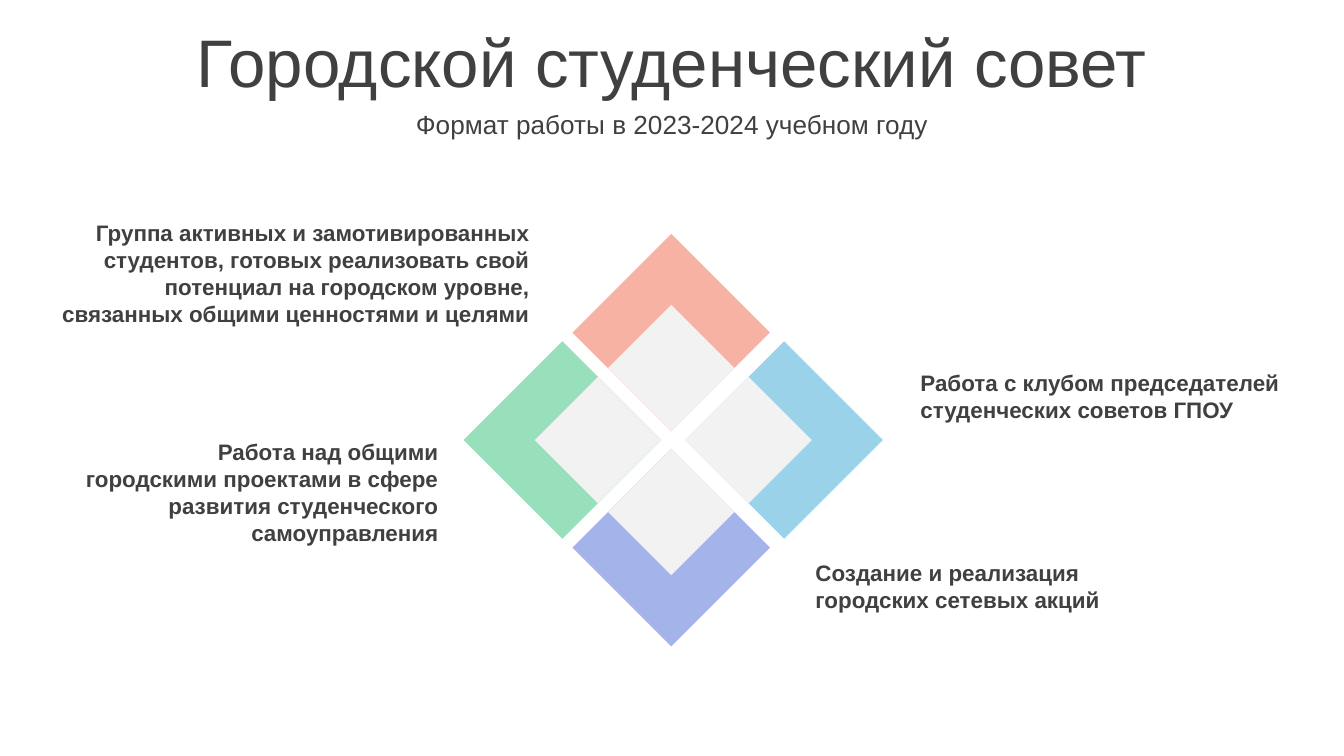
import pptx
import pptx.dml.color
import pptx.enum.shapes
import pptx.enum.text
import pptx.util

Pt = pptx.util.Pt
RGBColor = pptx.dml.color.RGBColor
PP_ALIGN = pptx.enum.text.PP_ALIGN

TEXT = RGBColor(0x40, 0x40, 0x40)
CORAL = RGBColor(0xF8, 0xB2, 0xA3)
INDIGO = RGBColor(0xA4, 0xB4, 0xEA)
GREEN = RGBColor(0x98, 0xDF, 0xBB)
SKY = RGBColor(0x9A, 0xD3, 0xE9)
GREY = RGBColor(0xF2, 0xF2, 0xF2)

OUTER = 105.8
INNER = 67.7
INSET = (OUTER - INNER) / 2

DIAMONDS = [
    (359.6, 178.2, 0, 1, CORAL),
    (359.6, 293.4, 0, -1, INDIGO),
    (301.3, 235.8, 1, 0, GREEN),
    (420.1, 235.8, -1, 0, SKY),
]

LABELS = [
    (486, 194.4, 207.4, 36, PP_ALIGN.LEFT,
     "Работа с клубом председателей студенческих советов ГПОУ"),
    (38.2, 231.1, 203.8, 65.5, PP_ALIGN.RIGHT,
     "Работа над общими городскими проектами в сфере развития "
     "студенческого самоуправления"),
    (429.8, 295.9, 203.8, 36, PP_ALIGN.LEFT,
     "Создание и реализация городских сетевых акций"),
    (24.5, 113.8, 266.4, 65.5, PP_ALIGN.RIGHT,
     "Группа активных и замотивированных студентов, готовых реализовать "
     "свой потенциал на городском уровне, связанных общими ценностями и целями"),
]


def write(tf, text, size, align, bold=False):
    tf.word_wrap = True
    tf.auto_size = pptx.enum.text.MSO_AUTO_SIZE.NONE
    p = tf.paragraphs[0]
    p.text = text
    p.alignment = align
    p.space_before = Pt(0)
    p.font.name = "Arial"
    p.font.size = Pt(size)
    p.font.bold = bold
    p.font.color.rgb = TEXT


def fill_heading(sp, top, height, text, size):
    sp.left, sp.top = Pt(0), Pt(top)
    sp.width, sp.height = Pt(720), Pt(height)
    write(sp.text_frame, text, size, PP_ALIGN.CENTER)
    sp.text_frame.vertical_anchor = pptx.enum.text.MSO_ANCHOR.MIDDLE


def add_diamond(s, x, y, size, color):
    sp = s.shapes.add_shape(
        pptx.enum.shapes.MSO_SHAPE.DIAMOND,
        Pt(x - size / 2), Pt(y - size / 2), Pt(size), Pt(size))
    sp.shadow.inherit = False
    sp.fill.solid()
    sp.fill.fore_color.rgb = color
    sp.line.fill.background()


def add_label(s, left, top, width, height, align, text):
    sp = s.shapes.add_textbox(Pt(left), Pt(top), Pt(width), Pt(height))
    write(sp.text_frame, text, 12, align, bold=True)


def main():
    prs = pptx.Presentation()
    prs.slide_width, prs.slide_height = Pt(720), Pt(405)
    s = prs.slides.add_slide(prs.slide_layouts[0])
    fill_heading(s.shapes.title, 10, 45.4, "Городской студенческий совет", 36)
    fill_heading(s.placeholders[1], 55.4, 22.3,
                 "Формат работы в 2023-2024 учебном году", 14)
    for x, y, dx, dy, color in DIAMONDS:
        add_diamond(s, x, y, OUTER, color)
        add_diamond(s, x + dx * INSET, y + dy * INSET, INNER, GREY)
    for label in LABELS:
        add_label(s, *label)
    prs.save("out.pptx")


if __name__ == "__main__":
    main()
